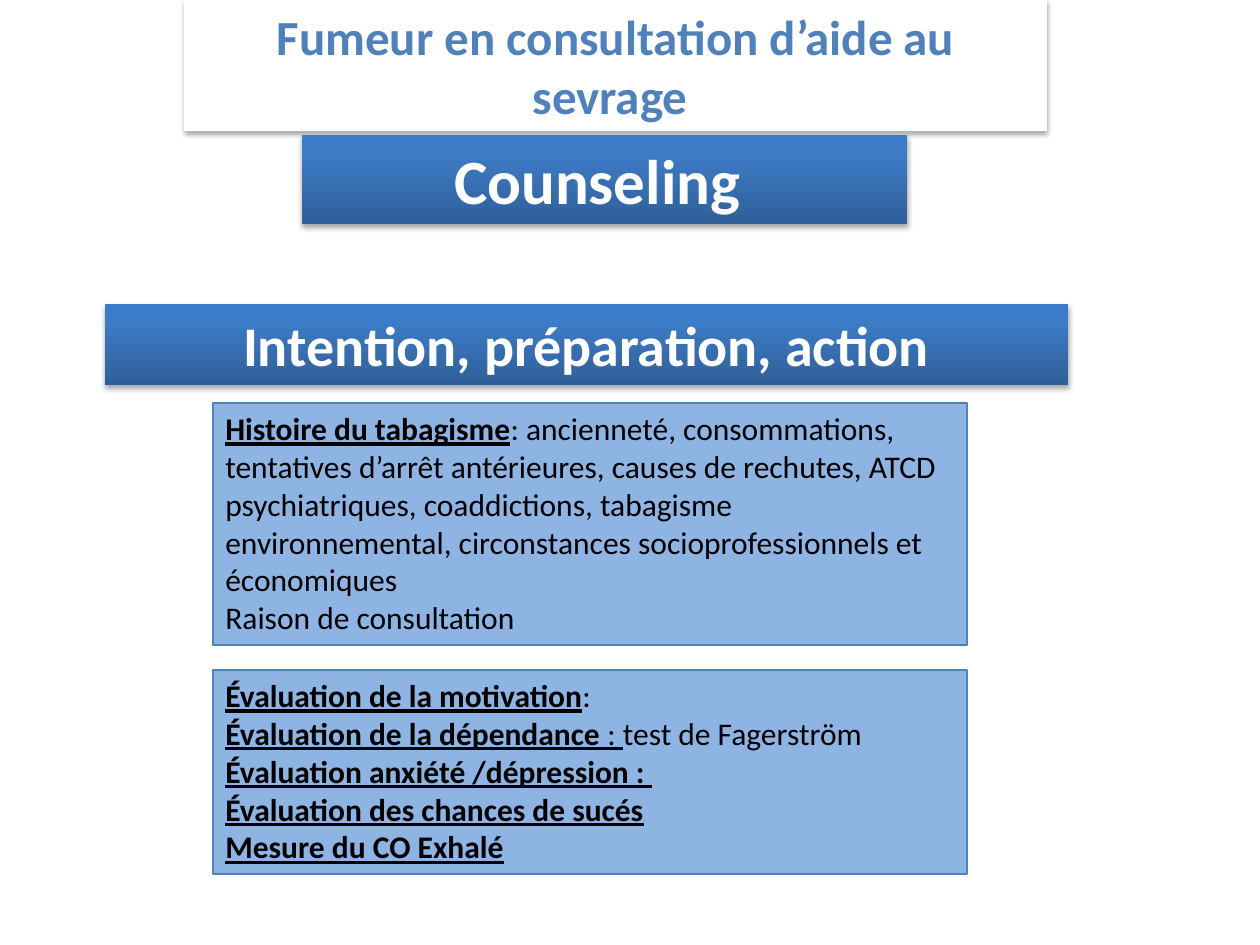
from dataclasses import dataclass

from lxml import etree
from pptx import Presentation
from pptx import util as u
from pptx.dml.color import RGBColor
from pptx.enum import shapes, text
from pptx.oxml.ns import qn

EMU_PER_INCH = 914400
PX_PER_INCH = 126


@dataclass(frozen=True)
class Theme:
    font: str = "Calibri"
    white: str = "FFFFFF"
    black: str = "000000"
    accent: str = "4F81BD"
    panel: str = "8EB4E3"
    banner_stops: tuple = ((0, "2F5F99"), (80, "3D7CC7"), (100, "3A7CCB"))
    title_size: int = 28
    counseling_size: int = 36
    stage_size: int = 32
    body_size: int = 18


@dataclass(frozen=True)
class Box:
    left: int
    top: int
    width: int
    height: int


@dataclass(frozen=True)
class Span:
    text: str
    bold: bool = False
    underline: bool = False


@dataclass(frozen=True)
class Banner:
    box: Box
    text: str
    size: int


@dataclass(frozen=True)
class Panel:
    box: Box
    paragraphs: tuple


THEME = Theme()


def px(value: int) -> int:
    return round(value * EMU_PER_INCH / PX_PER_INCH)


def heading(words: str) -> Span:
    return Span(words, bold=True, underline=True)


TITLE = Banner(Box(184, 0, 863, 131), "Fumeur en consultation d’aide au sevrage ",
               THEME.title_size)
BANNERS = (
    Banner(Box(105, 304, 963, 81), "Intention, préparation, action", THEME.stage_size),
    Banner(Box(302, 135, 605, 89), "Counseling ", THEME.counseling_size),
)
PANELS = (
    Panel(Box(213, 403, 754, 242), (
        (heading("Histoire du tabagisme"),
         Span(": ancienneté, consommations, tentatives d’arrêt antérieures, "
              "causes de rechutes, ATCD psychiatriques, coaddictions, tabagisme "
              "environnemental, circonstances socioprofessionnels et économiques")),
        (Span("Raison de consultation"),),
    )),
    Panel(Box(213, 670, 754, 204), (
        (heading("Évaluation de la motivation"), Span(":")),
        (heading("Évaluation de la dépendance "), Span(": ", underline=True),
         Span("test de Fagerström")),
        (heading("Évaluation anxiété /dépression : "),),
        (heading("Évaluation des chances de sucés"),),
        (heading("Mesure du CO Exhalé"),),
    )),
)


def place(shape, box: Box) -> None:
    shape.left, shape.top = px(box.left), px(box.top)
    shape.width, shape.height = px(box.width), px(box.height)


def add_rectangle(slide, box: Box):
    shape = slide.shapes.add_shape(shapes.MSO_SHAPE.RECTANGLE, 0, 0, 0, 0)
    place(shape, box)
    shape.shadow.inherit = False
    return shape


def fill_solid(shape, color: str) -> None:
    shape.fill.solid()
    shape.fill.fore_color.rgb = RGBColor.from_string(color)


def fill_banner_gradient(shape) -> None:
    shape.fill.gradient()
    shape.fill.gradient_angle = 90
    stops = next(shape._element.spPr.iter(qn("a:gsLst")))
    for stop in list(stops):
        stops.remove(stop)
    for percent, color in THEME.banner_stops:
        stop = etree.SubElement(stops, qn("a:gs"), pos=str(percent * 1000))
        etree.SubElement(stop, qn("a:srgbClr"), val=color)


def add_drop_shadow(shape) -> None:
    shape.shadow.inherit = False
    effects = shape._element.spPr.find(qn("a:effectLst"))
    shadow = etree.SubElement(effects, qn("a:outerShdw"), blurRad=str(u.Pt(3.1)),
                              dist=str(u.Pt(1.8)), dir="5400000", rotWithShape="0")
    color = etree.SubElement(shadow, qn("a:srgbClr"), val=THEME.black)
    etree.SubElement(color, qn("a:alpha"), val="35000")


def write(shape, paragraphs: tuple, size: int, color: str, alignment) -> None:
    frame = shape.text_frame
    frame.word_wrap = True
    frame.auto_size = text.MSO_AUTO_SIZE.SHAPE_TO_FIT_TEXT
    frame.vertical_anchor = text.MSO_ANCHOR.TOP
    for index, spans in enumerate(paragraphs):
        paragraph = frame.add_paragraph() if index else frame.paragraphs[0]
        paragraph.alignment = alignment
        for span in spans:
            run = paragraph.add_run()
            run.text = span.text
            run.font.name = THEME.font
            run.font.size = u.Pt(size)
            run.font.bold = span.bold
            run.font.underline = span.underline
            run.font.color.rgb = RGBColor.from_string(color)


def write_banner(shape, banner: Banner, color: str) -> None:
    write(shape, ((Span(banner.text, bold=True),),), banner.size, color,
          text.PP_ALIGN.CENTER)


def format_title(slide) -> None:
    title = slide.shapes.title
    place(title, TITLE.box)
    fill_solid(title, THEME.white)
    add_drop_shadow(title)
    write_banner(title, TITLE, THEME.accent)


def draw_banner(slide, banner: Banner) -> None:
    shape = add_rectangle(slide, banner.box)
    fill_banner_gradient(shape)
    shape.line.fill.background()
    add_drop_shadow(shape)
    write_banner(shape, banner, THEME.white)


def draw_panel(slide, panel: Panel) -> None:
    shape = add_rectangle(slide, panel.box)
    fill_solid(shape, THEME.panel)
    shape.line.color.rgb = RGBColor.from_string(THEME.accent)
    shape.line.width = u.Pt(0.75)
    write(shape, panel.paragraphs, THEME.body_size, THEME.black, text.PP_ALIGN.LEFT)


def main() -> None:
    presentation = Presentation()
    presentation.slide_width = u.Inches(10)
    presentation.slide_height = u.Inches(7.5)
    slide = presentation.slides.add_slide(
        presentation.slide_layouts.get_by_name("Title Only"))
    format_title(slide)
    for banner in BANNERS:
        draw_banner(slide, banner)
    for panel in PANELS:
        draw_panel(slide, panel)
    presentation.save("out.pptx")


if __name__ == "__main__":
    main()
